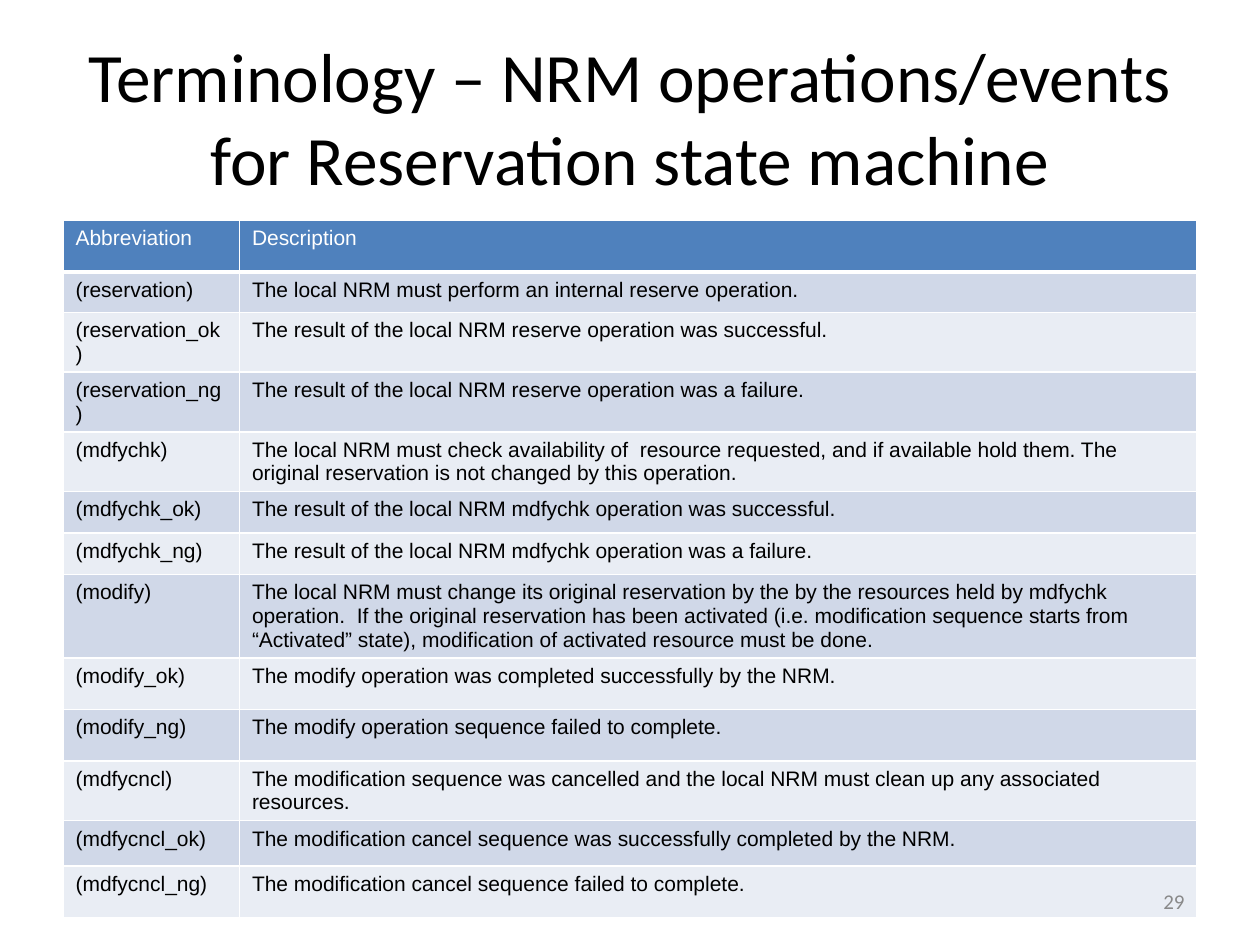
from lxml.etree import SubElement
from pptx import Presentation
from pptx.dml.color import RGBColor
from pptx.enum.text import MSO_ANCHOR, MSO_AUTO_SIZE, PP_ALIGN
from pptx.oxml import parse_xml
from pptx.oxml.ns import nsdecls, qn
from pptx.util import Inches, Pt

BLACK = RGBColor(0x00, 0x00, 0x00)
WHITE = RGBColor(0xFF, 0xFF, 0xFF)
GRAY = RGBColor(0x89, 0x89, 0x89)
HEADER_BLUE = RGBColor(0x4F, 0x81, 0xBD)
BAND_DARK = RGBColor(0xD0, 0xD8, 0xE8)
BAND_LIGHT = RGBColor(0xE9, 0xED, 0xF4)

COLUMN_WIDTHS = (1.4, 7.6)
HEADINGS = (0.41, "Abbreviation", "Description")
TERMS = [
    (0.32, "(reservation)", "The local NRM must perform an internal reserve operation."),
    (0.32, "(reservation_ok)", "The result of the local NRM reserve operation was successful."),
    (0.33, "(reservation_ng)", "The result of the local NRM reserve operation was a failure."),
    (0.41, "(mdfychk)",
     "The local NRM must check availability of  resource requested, and if available hold them. "
     "The original reservation is not changed by this operation. "),
    (0.33, "(mdfychk_ok)", "The result of the local NRM mdfychk operation was successful."),
    (0.33, "(mdfychk_ng)", "The result of the local NRM mdfychk operation was a failure."),
    (0.41, "(modify)",
     "The local NRM must change its original reservation by the by the resources held by mdfychk "
     "operation.  If the original reservation has been activated (i.e. modification sequence starts "
     "from “Activated” state), modification of activated resource must be done."),
    (0.41, "(modify_ok)", "The modify operation was completed successfully by the NRM."),
    (0.41, "(modify_ng)", "The modify operation sequence failed to complete."),
    (0.35, "(mdfycncl)",
     "The modification sequence was cancelled and the local NRM must clean up any associated resources."),
    (0.36, "(mdfycncl_ok)",
     "The modification cancel sequence was successfully completed by the NRM."),
    (0.41, "(mdfycncl_ng)", "The modification cancel sequence failed to complete."),
]


def write(frame, text, font="Arial", size=12, color=BLACK, align=PP_ALIGN.LEFT):
    paragraph = frame.paragraphs[0]
    paragraph.alignment = align
    run = paragraph.add_run()
    run.text = text
    run.font.name = font
    run.font.size = Pt(size)
    run.font.bold = False
    run.font.color.rgb = color


def set_borders(cell, color, bottom_width):
    properties = cell._tc.get_or_add_tcPr()
    widths = {"lnL": 1, "lnR": 1, "lnT": 1, "lnB": bottom_width}
    for position, (side, width) in enumerate(widths.items()):
        border = parse_xml(f'<a:{side} {nsdecls("a")} w="{Pt(width)}"/>')
        fill = SubElement(border, qn("a:solidFill"))
        SubElement(fill, qn("a:srgbClr"), val=str(color))
        properties.insert(position, border)


class SlideBuilder:
    heading_font = "Calibri"
    border_color = WHITE

    def __init__(self, slide):
        self.slide = slide

    def title(self, text, left, top, width, height):
        heading = self.slide.shapes.title
        heading.left, heading.top = Inches(left), Inches(top)
        heading.width, heading.height = Inches(width), Inches(height)
        frame = heading.text_frame
        frame.word_wrap = True
        frame.auto_size = MSO_AUTO_SIZE.NONE
        frame.vertical_anchor = MSO_ANCHOR.MIDDLE
        write(frame, text, self.heading_font, 39.6, align=PP_ALIGN.CENTER)

    def table(self, rows, column_widths, left, top):
        height = sum(row[0] for row in rows)
        glossary = self.slide.shapes.add_table(
            len(rows), len(column_widths), Inches(left), Inches(top),
            Inches(sum(column_widths)), Inches(height)).table
        for column, width in zip(glossary.columns, column_widths):
            column.width = Inches(width)
        for index, (row_height, *texts) in enumerate(rows):
            glossary.rows[index].height = Inches(row_height)
            band = BAND_DARK if index % 2 else BAND_LIGHT
            for cell, text in zip(glossary.rows[index].cells, texts):
                cell.fill.solid()
                cell.fill.fore_color.rgb = band if index else HEADER_BLUE
                set_borders(cell, self.border_color, 1 if index else 3)
                write(cell.text_frame, text, color=BLACK if index else WHITE)

    def page_number(self, text, left, top, width, height):
        frame = self.slide.shapes.add_textbox(
            Inches(left), Inches(top), Inches(width), Inches(height)).text_frame
        frame.word_wrap = True
        frame.vertical_anchor = MSO_ANCHOR.MIDDLE
        write(frame, text, self.heading_font, color=GRAY, align=PP_ALIGN.RIGHT)


def main():
    presentation = Presentation()
    presentation.slide_width, presentation.slide_height = Inches(10), Inches(7.5)
    builder = SlideBuilder(presentation.slides.add_slide(presentation.slide_layouts[5]))
    builder.title("Terminology – NRM operations/events for Reservation state machine",
                  0.5, 0.3, 9, 1.25)
    builder.table([HEADINGS, *TERMS], COLUMN_WIDTHS, 0.5, 1.75)
    builder.page_number("29", 7.17, 6.95, 2.33, 0.4)
    presentation.save("out.pptx")


if __name__ == "__main__":
    main()
